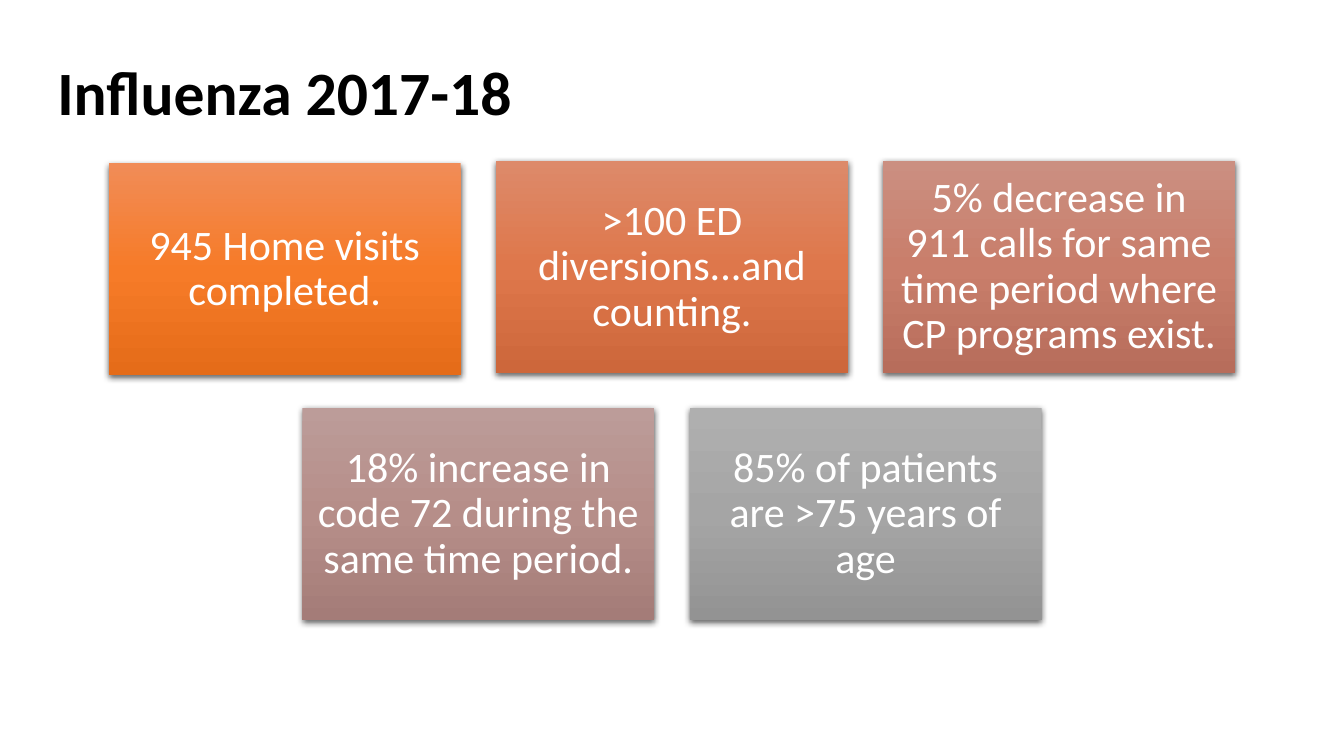
from copy import deepcopy

from pptx import Presentation
from pptx.dml.color import RGBColor
from pptx.enum.shapes import MSO_SHAPE
from pptx.enum.text import MSO_ANCHOR, PP_ALIGN
from pptx.oxml import parse_xml
from pptx.oxml.ns import nsdecls, qn
from pptx.util import Inches, Pt

CARD_WIDTH, CARD_HEIGHT = 3.49, 2.1
COLUMN_STEP = 3.84
TOP_ROW, BOTTOM_ROW = 1.6, 4.05
FIRST_COLUMN = 1.08

CARDS = [
    (0, 1.62, "945 Home visits completed.", ("F18C57", "F67B28", "E56C19")),
    (1, TOP_ROW, ">100 ED diversions...and counting.", ("DD8A6A", "DE774B", "CD673B")),
    (2, TOP_ROW, "5% decrease in 911 calls for same time period where CP programs exist.",
     ("CB8F81", "C97E6B", "B76D5B")),
    (0.5, BOTTOM_ROW, "18% increase in code 72 during the same time period.",
     ("BC9C99", "B68E89", "A47C78")),
    (1.5, BOTTOM_ROW, "85% of patients are >75 years of age", ("AFAFAF", "A5A5A5", "939393")),
]


def color(value):
    return RGBColor.from_string(value)


def apply(target, values):
    for name, value in values.items():
        setattr(target, name, value)


class SlideBuilder:
    font = "Calibri"

    def __init__(self, page):
        self.page = page

    def add_text(self, box, text, size, ink, bold, align, margin):
        frame = box.text_frame
        apply(frame, {
            "word_wrap": True,
            "vertical_anchor": MSO_ANCHOR.MIDDLE,
            "margin_left": margin,
            "margin_right": margin,
            "margin_top": margin,
            "margin_bottom": margin,
        })
        para = frame.paragraphs[0]
        apply(para, {"alignment": align, "line_spacing": 0.9})
        span = para.add_run()
        span.text = text
        apply(span.font, {"name": self.font, "size": Pt(size), "bold": bold})
        span.font.color.rgb = color(ink)

    def title(self, text, left, top, width, height):
        box = self.page.shapes.add_textbox(
            Inches(left), Inches(top), Inches(width), Inches(height))
        self.add_text(box, text, 44, "000000", True, PP_ALIGN.LEFT, Inches(0.1))

    def card(self, text, left, top, shades):
        box = self.page.shapes.add_shape(
            MSO_SHAPE.RECTANGLE, Inches(left), Inches(top),
            Inches(CARD_WIDTH), Inches(CARD_HEIGHT))
        box.line.fill.background()
        self.gradient(box, shades)
        self.shadow(box)
        self.add_text(box, text, 30, "FFFFFF", False, PP_ALIGN.CENTER, Inches(0.12))

    def gradient(self, box, shades):
        box.fill.gradient()
        box.fill.gradient_angle = 270
        stop_list = box._element.spPr.find(qn("a:gradFill")).find(qn("a:gsLst"))
        stop_list.append(deepcopy(stop_list[0]))
        for index, (stop, shade) in enumerate(zip(box.fill.gradient_stops, shades)):
            stop.position = index / 2
            stop.color.rgb = color(shade)

    def shadow(self, box):
        box.shadow.inherit = False
        effects = box._element.spPr.find(qn("a:effectLst"))
        effects.append(parse_xml(
            f'<a:outerShdw {nsdecls("a")} blurRad="{Pt(4.5)}" dist="{Pt(1.5)}" '
            'dir="5400000" algn="ctr" rotWithShape="0">'
            '<a:srgbClr val="000000"><a:alpha val="63000"/></a:srgbClr></a:outerShdw>'))


def main():
    deck = Presentation()
    apply(deck, {"slide_width": Inches(13.33), "slide_height": Inches(7.5)})
    builder = SlideBuilder(deck.slides.add_slide(deck.slide_layouts[6]))
    builder.title("Influenza 2017-18", 0.47, 0.18, 7.69, 1.53)
    for column, top, text, shades in CARDS:
        builder.card(text, FIRST_COLUMN + column * COLUMN_STEP, top, shades)
    deck.save("out.pptx")


if __name__ == "__main__":
    main()
